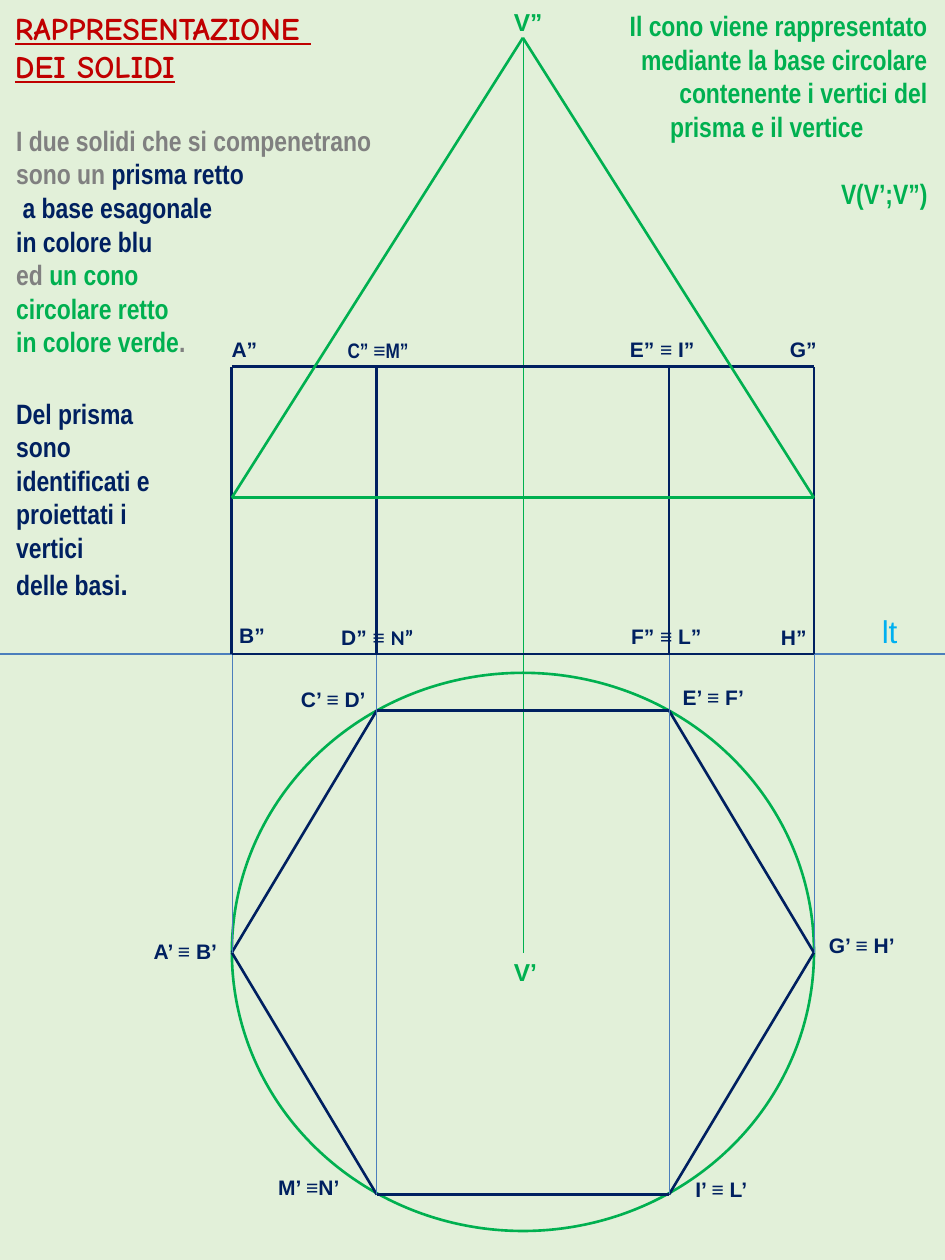
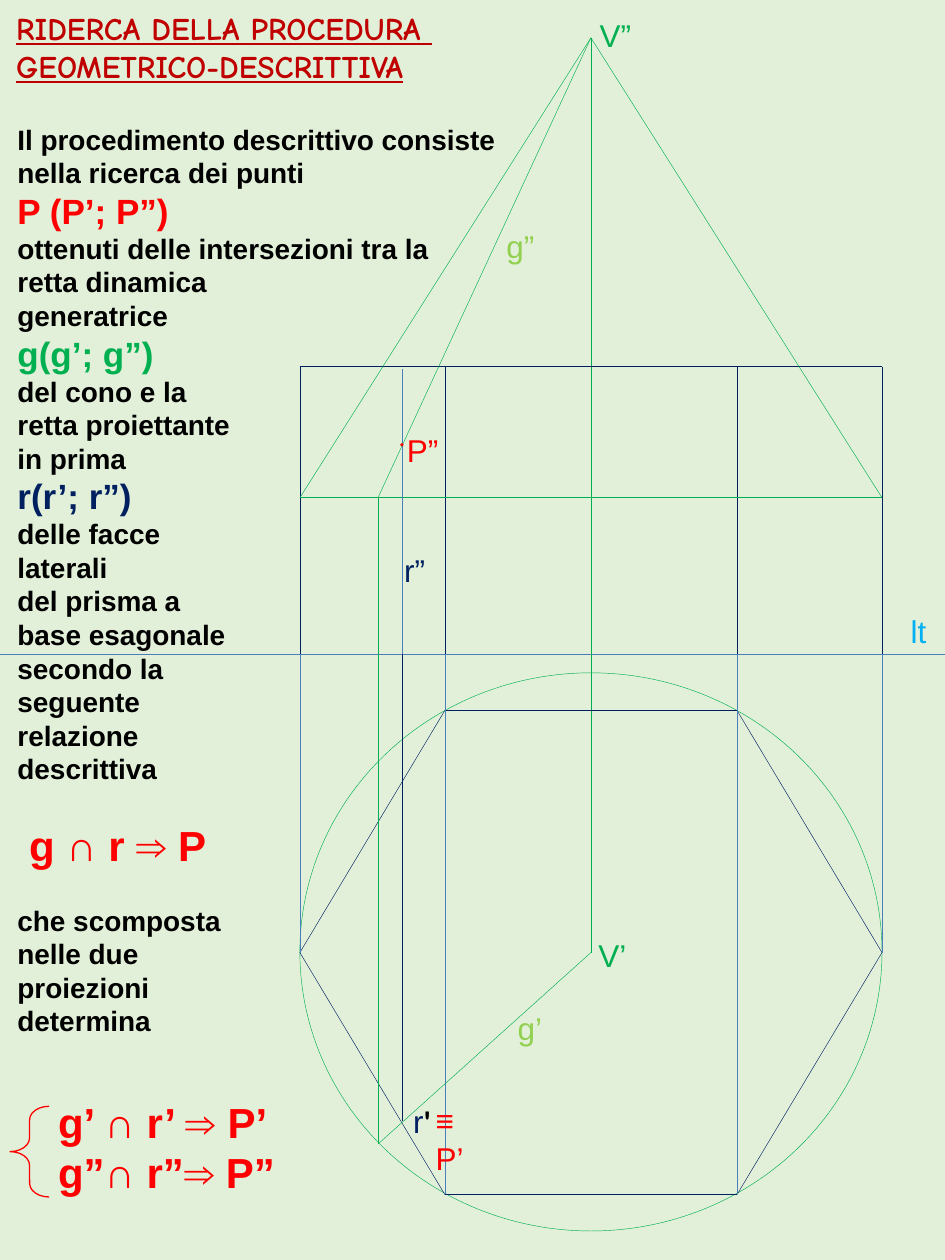
from dataclasses import dataclass
from typing import Optional

import pptx
import pptx.dml.color
import pptx.enum.shapes
import pptx.enum.text
import pptx.oxml.ns
import pptx.util
from lxml import etree

COLS, ROWS = 75, 100
WIDTH, HEIGHT = pptx.util.Inches(7.5), pptx.util.Inches(10)
SHAPE = pptx.enum.shapes.MSO_SHAPE
ALIGN = pptx.enum.text.PP_ALIGN


@dataclass(frozen=True)
class Theme:
    background: str = "E2F0D9"
    title: str = "C00000"
    prism: str = "002060"
    cone: str = "00B050"
    generatrix: str = "92D050"
    projector: str = "4B7EBC"
    ground: str = "00B0F0"
    point: str = "FF0000"
    muted: str = "808080"
    ink: str = "000000"
    sans: str = "Arial"
    narrow: str = "Arial Narrow"
    rounded: str = "Calibri"
    display: str = "Comic Neue"
    label: float = 12
    apex: float = 14
    body: float = 16
    large: float = 18
    symbol: float = 20
    formula: float = 24
    hairline: float = 0.25
    thin: float = 0.75
    bold: float = 1.5


T = Theme()


@dataclass(frozen=True)
class Run:
    """A stretch of text; unset fields follow its paragraph."""
    text: str
    color: Optional[str] = None
    font: Optional[str] = None
    size: Optional[float] = None
    bold: Optional[bool] = None


@dataclass(frozen=True)
class Para:
    runs: tuple[Run, ...]
    color: str = T.ink
    size: float = T.body
    font: str = T.sans
    bold: bool = True
    underline: bool = False
    before: float = 0
    indent: float = 0
    align: Optional[ALIGN] = None


@dataclass(frozen=True)
class Box:
    """A place on the grid, in columns and rows."""
    col: float
    row: float
    cols: float
    rows: float


@dataclass(frozen=True)
class Label:
    box: Box
    para: Para


@dataclass(frozen=True)
class Weights:
    solid: float
    ground: float


# Plan and elevation: columns from the axis, rows from the top.
OUTER, INNER = 23.1, 11.6
APEX, PRISM_TOP, CONE_BASE, GROUND = 3, 29.1, 39.5, 51.9
HEX_TOP, CENTRE, HEX_BOTTOM = 56.4, 75.6, 94.8
CIRCLE_TOP, CIRCLE_ROWS = 53.4, 44.3


def x(col: float) -> int:
    return round(WIDTH * col / COLS)


def y(row: float) -> int:
    return round(HEIGHT * row / ROWS)


def rgb(color: str) -> pptx.dml.color.RGBColor:
    return pptx.dml.color.RGBColor.from_string(color)


def para(text: str, color: str = T.ink, **style) -> Para:
    return Para((Run(text),), color, **style)


def set_font(font, item) -> None:
    if item.font:
        font.name = item.font
    if item.size:
        font.size = pptx.util.Pt(item.size)
    if item.bold is not None:
        font.bold = item.bold
    if item.color:
        font.color.rgb = rgb(item.color)


def add_line(slide, start: tuple[float, float], end: tuple[float, float],
             color: str, weight: float) -> None:
    line = slide.shapes.add_connector(
        pptx.enum.shapes.MSO_CONNECTOR.STRAIGHT,
        x(start[0]), y(start[1]), x(end[0]), y(end[1]))
    line.line.color.rgb = rgb(color)
    line.line.width = pptx.util.Pt(weight)
    sp_pr = line._element.find(pptx.oxml.ns.qn("p:spPr"))
    etree.SubElement(sp_pr, pptx.oxml.ns.qn("a:effectLst"))


def add_outline(slide, kind: SHAPE, box: Box, color: str, weight: float):
    sp = slide.shapes.add_shape(kind, x(box.col), y(box.row),
                                x(box.cols), y(box.rows))
    sp.shadow.inherit = False
    sp.fill.background()
    sp.line.color.rgb = rgb(color)
    sp.line.width = pptx.util.Pt(weight)
    return sp


def add_text(slide, box: Box, *paras: Para) -> None:
    sp = slide.shapes.add_textbox(x(box.col), y(box.row),
                                  x(box.cols), y(box.rows))
    tf = sp.text_frame
    tf.word_wrap = True
    for i, item in enumerate(paras):
        p = tf.add_paragraph() if i else tf.paragraphs[0]
        set_font(p.font, item)
        p.font.underline = item.underline or None
        p.alignment = item.align
        if item.before:
            p.space_before = pptx.util.Pt(item.before)
        if item.indent:
            p._p.get_or_add_pPr().set("marL", str(x(item.indent)))
        for n, part in enumerate(item.runs):
            if item.underline and n:
                p.add_line_break()
            r = p.add_run()
            r.text = part.text
            set_font(r.font, part)


def add_title(slide, box: Box, *lines: str) -> None:
    """Underlined heading, one run for each line."""
    runs = tuple(Run(line) for line in lines)
    add_text(slide, box, Para(runs, T.title, T.large, T.display, underline=True))


def add_solids(slide, axis: float, weights: Weights) -> None:
    """Cone and hexagonal prism in plan and elevation about an axis column."""
    left, inner_left, inner_right, right = (
        axis + d for d in (-OUTER, -INNER, INNER, OUTER))
    w = weights.solid
    add_line(slide, (0, GROUND), (COLS, GROUND), T.projector, weights.ground)
    add_outline(slide, SHAPE.OVAL,
                Box(left, CIRCLE_TOP, 2 * OUTER, CIRCLE_ROWS), T.cone, w)
    add_line(slide, (axis, APEX), (axis, CENTRE), T.cone, T.hairline)

    hexagon = [(left, CENTRE), (inner_left, HEX_TOP), (inner_right, HEX_TOP),
               (right, CENTRE), (inner_right, HEX_BOTTOM), (inner_left, HEX_BOTTOM)]
    for start, end in zip(hexagon, hexagon[1:] + hexagon[:1]):
        add_line(slide, start, end, T.prism, w)

    for col, bottom in ((left, CENTRE), (inner_left, HEX_BOTTOM),
                        (inner_right, HEX_BOTTOM), (right, CENTRE)):
        add_line(slide, (col, GROUND), (col, bottom), T.projector, T.hairline)
        add_line(slide, (col, GROUND), (col, PRISM_TOP), T.prism, w)
    add_line(slide, (left, PRISM_TOP), (right, PRISM_TOP), T.prism, w)

    cone = [(left, CONE_BASE), (axis, APEX), (right, CONE_BASE)]
    for start, end in zip(cone, cone[1:] + cone[:1]):
        add_line(slide, start, end, T.cone, w)


def new_slide(prs):
    slide = prs.slides.add_slide(prs.slide_layouts[6])
    slide.background.fill.solid()
    slide.background.fill.fore_color.rgb = rgb(T.background)
    return slide


def vertex(col: float, row: float, text: str, cols: float = 7.9) -> Label:
    return Label(Box(col, row, cols, 3), para(text, T.prism, size=T.label))


def tag(col: float, row: float, text: str, color: str, cols: float = 5.5) -> Label:
    return Label(Box(col, row, cols, 3.1),
                 para(text, color, size=T.large, bold=False))


def build_solids_slide(prs) -> None:
    slide = new_slide(prs)
    axis = 41.5
    add_solids(slide, axis, Weights(T.bold, T.thin))
    add_line(slide, (axis - OUTER, GROUND), (axis + OUTER, GROUND), T.prism, T.bold)

    def narrow(text: str, color: str, **style) -> Para:
        return para(text, color, font=T.narrow, **style)

    add_text(
        slide, Box(0.3, 9.3, 33.5, 39.4),
        narrow("I due solidi che si compenetrano", T.muted),
        Para((Run("sono un ", T.muted), Run("prisma retto")), T.prism, font=T.narrow),
        narrow(" a base esagonale", T.prism),
        narrow("in colore blu", T.prism),
        Para((Run("ed ", T.muted), Run("un cono")), T.cone, font=T.narrow),
        narrow("circolare retto", T.cone),
        Para((Run("in colore verde"), Run(".", T.muted)), T.cone, font=T.narrow),
        narrow("Del prisma", T.prism, before=21.6),
        *(narrow(line, T.prism)
          for line in ("sono", "identificati e", "proiettati i", "vertici")),
        Para((Run("delle basi"), Run(".", size=T.large)), T.prism, font=T.narrow))
    add_text(
        slide, Box(48.6, 0.2, 26, 14.5),
        *(narrow(line, T.cone, align=ALIGN.RIGHT) for line in (
            "Il cono viene rappresentato", "mediante la base circolare",
            "contenente i vertici del")),
        narrow("prisma e il vertice", T.cone, indent=3.6),
        narrow("V(V’;V”)", T.cone, align=ALIGN.RIGHT, before=19.2))

    labels = [
        vertex(11.2, 74, "A’ ≡ B’"), vertex(22.9, 54, "C’ ≡ D’"),
        vertex(53.2, 53.8, "E’ ≡ F’"), vertex(64.8, 73.5, "G’ ≡ H’"),
        vertex(54.2, 92.9, "I’ ≡ L’"), vertex(21.1, 92.7, "M’ ≡N’"),
        vertex(17.4, 26.2, "A”", 4.3), vertex(18, 48.9, "B”", 4.3),
        vertex(61.7, 26.2, "G”", 4.3), vertex(61, 49.1, "H”", 4.3),
        vertex(49, 26.2, "E” ≡ I”"), vertex(49.1, 49, "F” ≡ L”"),
        Label(Box(26.6, 26.3, 7.9, 3),
              Para((Run("C” "), Run("≡", font=T.sans), Run("M”")),
                   T.prism, T.label, T.narrow)),
        Label(Box(26.1, 49.1, 7.9, 3),
              Para((Run("D” ≡ "), Run("N”", font=T.rounded)), T.prism, T.label)),
        *(Label(Box(39.8, row, 5.5, 3.4), para(text, T.cone, size=T.apex))
          for row, text in ((75.5, "V’"), (0.1, "V”"))),
        tag(69, 48.1, "lt", T.ground, 4.7),
    ]
    for label in labels:
        add_text(slide, label.box, label.para)
    add_title(slide, Box(0.2, 0.2, 29.1, 7.1), "RAPPRESENTAZIONE ", "DEI SOLIDI")


def build_procedure_slide(prs) -> None:
    slide = new_slide(prs)
    axis, foot, line_r = 46.9, 30, 31.9
    add_solids(slide, axis, Weights(T.hairline, T.hairline))
    generatrix = [(axis, CENTRE), (foot, 90.8), (foot, CONE_BASE), (axis, APEX)]
    for start, end in zip(generatrix, generatrix[1:]):
        add_line(slide, start, end, T.cone, T.hairline)
    add_line(slide, (line_r, 89), (line_r, GROUND), T.prism, T.hairline)
    add_line(slide, (line_r, GROUND), (line_r, 29.3), T.projector, T.hairline)
    dot = add_outline(slide, SHAPE.OVAL, Box(31.8, 35.2, 0.2, 0.2), T.point, T.hairline)
    dot.fill.solid()
    dot.fill.fore_color.rgb = rgb(T.point)

    add_title(slide, Box(0.3, 0.2, 42.9, 7.1),
              "RIDERCA DELLA PROCEDURA ", "GEOMETRICO-DESCRITTIVA")
    add_text(
        slide, Box(0.4, 9.2, 43.7, 85.8),
        para("Il procedimento descrittivo consiste nella ricerca dei punti"),
        para("P (P’; P”)", T.point, size=T.symbol),
        *map(para, ("ottenuti delle intersezioni tra la", "retta dinamica", "generatrice")),
        para("g(g’; g”)", T.cone, size=T.symbol),
        *map(para, ("del cono e la", "retta proiettante", "in prima")),
        para("r(r’; r”)", T.prism, size=T.symbol),
        *map(para, ("delle facce", "laterali", "del prisma a", "base esagonale",
                    "secondo la", "seguente", "relazione", "descrittiva")),
        para(" g ∩ r ⇒ P", T.point, size=T.formula, before=19.2),
        para("che scomposta", before=19.2),
        *map(para, ("nelle due", "proiezioni", "determina")))
    add_text(slide, Box(2.7, 86.5, 23.3, 9.8), *(
        Para((Run(left), Run("⇒", bold=False), Run(right)), T.point, T.formula)
        for left, right in ((" g’ ∩ r’ ", " P’"), (" g”∩ r”", " P”"))))
    brace = add_outline(slide, SHAPE.LEFT_BRACE, Box(0.8, 87.8, 3.1, 7.2), T.point, T.thin)
    brace.adjustments[0] = 0.35

    labels = [
        tag(39.2, 17.5, "g”", T.generatrix), tag(40.1, 79.6, "g’", T.generatrix),
        tag(31.1, 43.2, "r”", T.prism), tag(31.3, 33.7, "P”", T.point),
        tag(33.6, 86.9, "≡ P’", T.point, 6.3), tag(71.3, 48.1, "lt", T.ground, 4.7),
        tag(46.5, 73.8, "V’", T.cone), tag(46.6, 0.8, "V”", T.cone),
        Label(Box(31.8, 87, 3.5, 3.1),
              Para((Run("r"), Run("'", T.ink, T.rounded, bold=True)),
                   T.prism, T.large, bold=False)),
    ]
    for label in labels:
        add_text(slide, label.box, label.para)


def main() -> None:
    prs = pptx.Presentation()
    prs.slide_width, prs.slide_height = WIDTH, HEIGHT
    build_solids_slide(prs)
    build_procedure_slide(prs)
    prs.save("out.pptx")


if __name__ == "__main__":
    main()
